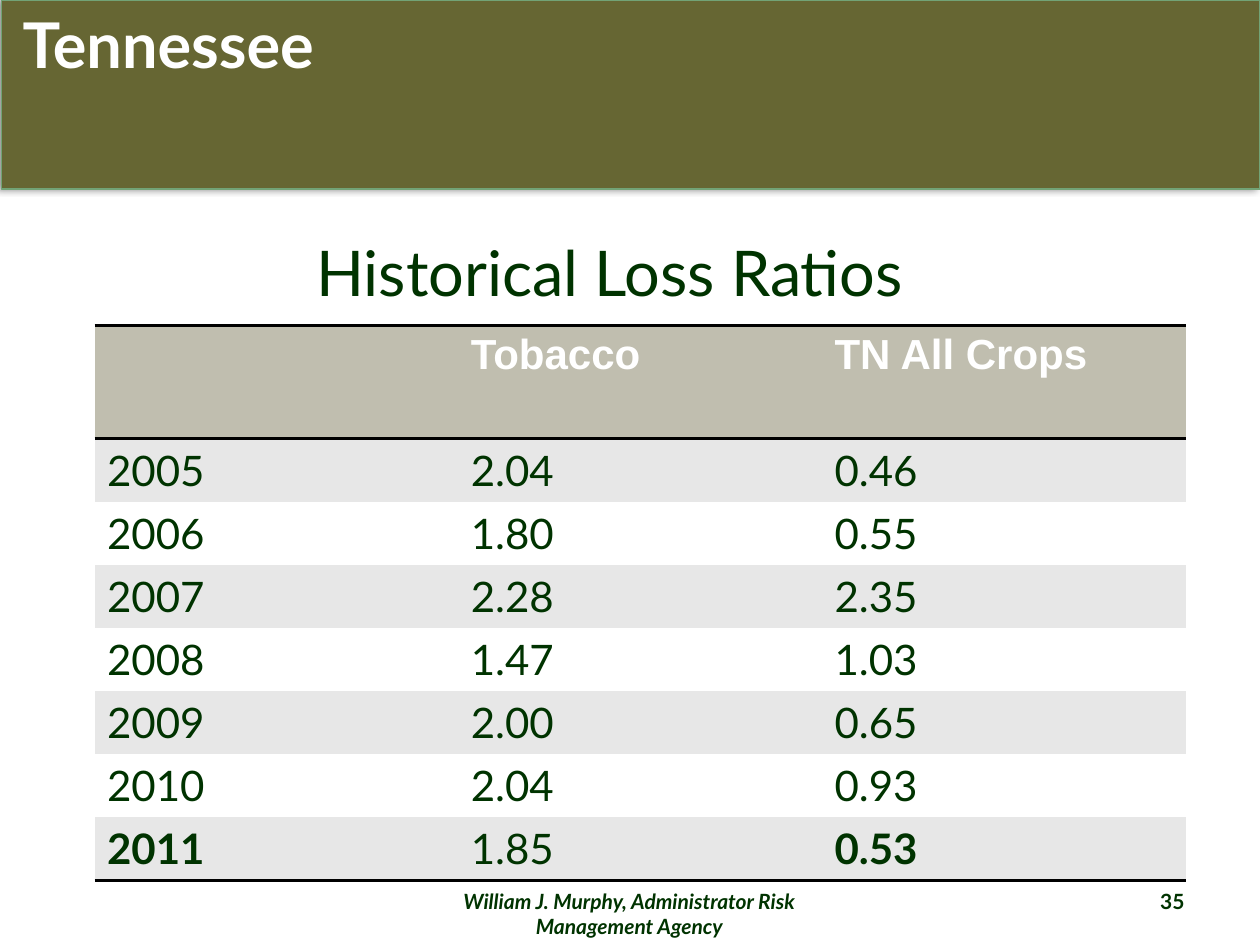
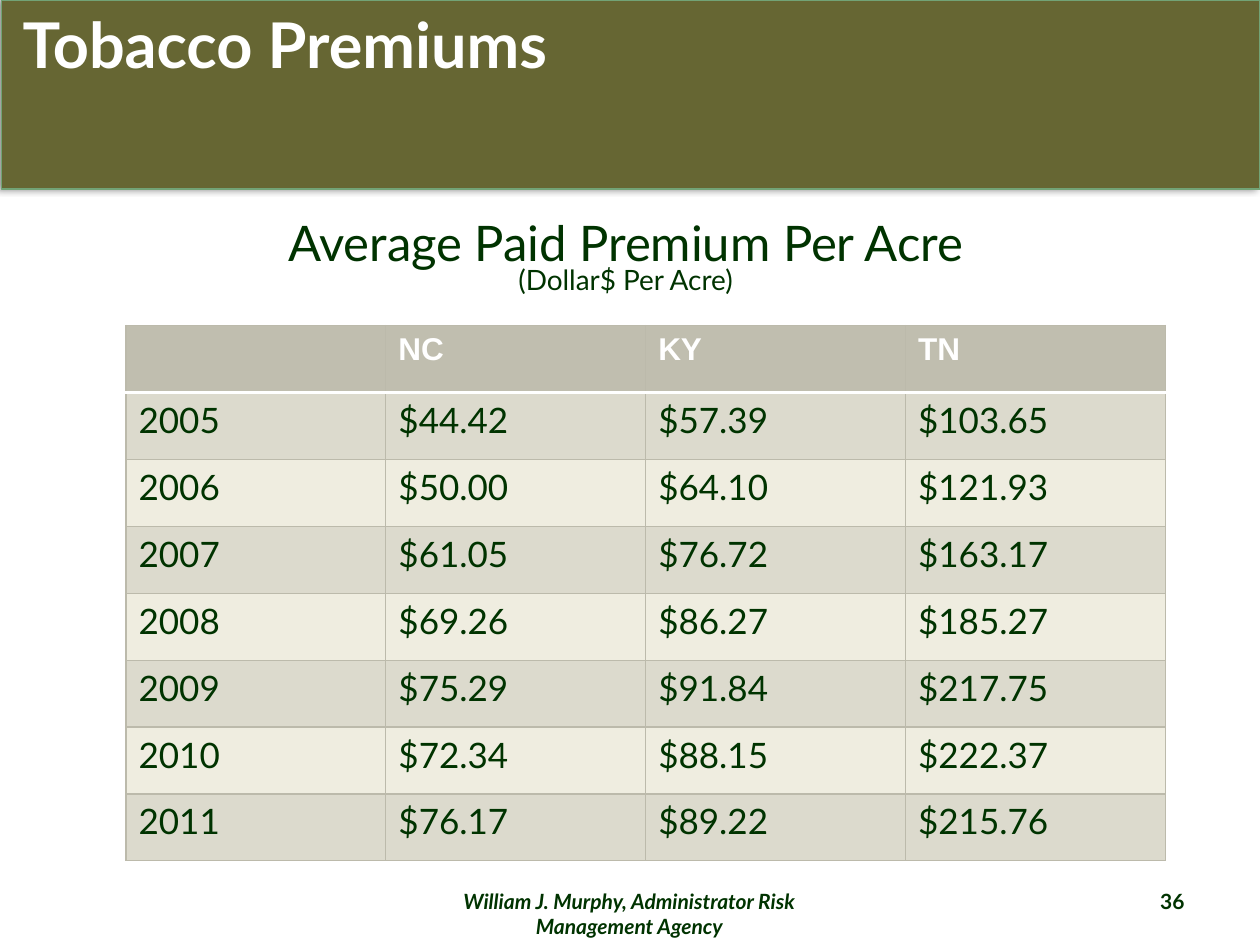
from lxml.etree import SubElement as Sub
from pptx import Presentation
from pptx.dml.color import RGBColor
from pptx.enum.shapes import MSO_SHAPE as Kind
from pptx.enum.text import MSO_ANCHOR as Anchor, MSO_AUTO_SIZE as Fit, PP_ALIGN as Align
from pptx.oxml.ns import qn
from pptx.util import Inches, Pt

tint = RGBColor.from_string
GREEN, WHITE, BLACK = "003300", "FFFFFF", "000000"
OLIVE, SAGE, STONE, EDGE = "666633", "72A376", "C0BEAF", "BCBAAB"
NOGRID = "{2D5ABB26-0587-4C30-8999-92F81FD0307C}"


def put(para, text, size, color=GREEN, face="Lato", bold=False, slant=False):
    run = para.add_run()
    run.text = text
    font = run.font
    font.name, font.size, font.bold, font.italic = face, Pt(size), bold, slant
    font.color.rgb = tint(color)


def rule(cell, side, color, width):
    line = Sub(cell._tc.get_or_add_tcPr(), qn("a:ln" + side), w=str(Pt(width)))
    Sub(Sub(line, qn("a:solidFill")), qn("a:srgbClr"), val=color)


pages = [
    dict(
        title="Tennessee", page="35",
        head=[("Historical Loss Ratios", 36)], spot=(2.41, 1.8, 5.25, 0.71),
        align=Align.LEFT, gap=1.0,
        left=0.75, wide=8.66, rows=[0.9] + [0.5] * 7, sizes=(24, 24),
        bands=("E7E7E7", WHITE), sides=None,
        rules={n: (BLACK, 2) for n in (0, 1, 8)},
        bold=[(7, 0), (7, 2)],
        data=[
            ("", "Tobacco", "TN All Crops"),
            ("2005", "2.04", "0.46"),
            ("2006", "1.80", "0.55"),
            ("2007", "2.28", "2.35"),
            ("2008", "1.47", "1.03"),
            ("2009", "2.00", "0.65"),
            ("2010", "2.04", "0.93"),
            ("2011", "1.85", "0.53"),
        ],
    ),
    dict(
        title="Tobacco Premiums", page="36",
        head=[("Average Paid Premium Per Acre ", 28), ("(Dollar$ Per Acre)", 16)],
        spot=(2.09, 1.75, 5.75, 0.66), align=Align.CENTER, gap=0.75,
        left=1, wide=8.25, rows=[4.25 / 8] * 8, sizes=(18, 20),
        bands=("DCDACD", "EFEDE0"), sides=(EDGE, 0.75),
        rules={n: (WHITE, 2) if n == 1 else (EDGE, 0.75) for n in range(9)},
        bold=[],
        data=[
            ("", "NC", "KY", "TN"),
            ("2005", "$44.42", "$57.39", "$103.65"),
            ("2006", "$50.00", "$64.10", "$121.93"),
            ("2007", "$61.05", "$76.72", "$163.17"),
            ("2008", "$69.26", "$86.27", "$185.27"),
            ("2009", "$75.29", "$91.84", "$217.75"),
            ("2010", "$72.34", "$88.15", "$222.37"),
            ("2011", "$76.17", "$89.22", "$215.76"),
        ],
    ),
]

deck = Presentation()
deck.slide_width, deck.slide_height = Inches(10), Inches(7.5)
base = deck.slide_layouts.get_by_name("Title Only")

for page in pages:
    slide = deck.slides.add_slide(base)
    band = slide.shapes.add_shape(Kind.RECTANGLE, Inches(0.01), 0, Inches(9.99), Inches(1.5))
    band.fill.solid()
    band.fill.fore_color.rgb = tint(OLIVE)
    band.line.color.rgb = tint(SAGE)
    band.line.width = Pt(0.75)
    band.shadow.inherit = False
    glow = Sub(band.element.spPr.find(qn("a:effectLst")), qn("a:outerShdw"),
               blurRad=str(Pt(4)), dist=str(Pt(3)), dir=str(180 * 60000), rotWithShape="0")
    Sub(Sub(glow, qn("a:srgbClr"), val=BLACK), qn("a:alpha"), val="40000")
    slide.shapes.element.insert(2, band.element)

    title = slide.shapes.title
    title.left, title.top, title.width, title.height = map(Inches, (0.08, 0.13, 5.67, 1.25))
    title.text_frame.vertical_anchor = Anchor.TOP
    title.text_frame.auto_size = Fit.NONE
    para = title.text_frame.paragraphs[0]
    para.alignment, para.line_spacing = Align.LEFT, 0.75
    put(para, page["title"], 36, WHITE, bold=True)

    boxes = [
        (page["spot"], page["align"], page["gap"], page["head"], {}),
        ((3.41, 7, 3.17, 0.27), Align.CENTER, 1.0,
         [("William J. Murphy, Administrator Risk Management Agency", 12)],
         dict(bold=True, slant=True)),
        ((7.17, 7, 2.33, 0.27), Align.RIGHT, 1.0, [(page["page"], 12)], dict(bold=True)),
    ]
    for spot, align, gap, runs, style in boxes:
        frame = slide.shapes.add_textbox(*map(Inches, spot)).text_frame
        frame.word_wrap = True
        para = frame.paragraphs[0]
        para.alignment, para.line_spacing = align, gap
        for text, size in runs:
            put(para, text, size, **style)

    data, rows = page["data"], page["rows"]
    count = len(data[0])
    frame = slide.shapes.add_table(len(data), count, Inches(page["left"]), Inches(31 / 12),
                                   Inches(page["wide"]), Inches(sum(rows)))
    frame.element.find(".//" + qn("a:tableStyleId")).text = NOGRID
    table = frame.table
    for col in table.columns:
        col.width = Inches(page["wide"] / count)
    for r, line in enumerate(data):
        table.rows[r].height = Inches(rows[r])
        for c, text in enumerate(line):
            cell = table.cell(r, c)
            edges = [("L", page["sides"]), ("R", page["sides"]),
                     ("T", None if r else page["rules"][0]), ("B", page["rules"].get(r + 1))]
            for side, edge in edges:
                if edge:
                    rule(cell, side, *edge)
            cell.fill.solid()
            cell.fill.fore_color.rgb = tint(page["bands"][(r - 1) % 2] if r else STONE)
            para = cell.text_frame.paragraphs[0]
            if r:
                put(para, text, page["sizes"][1], bold=(r, c) in page["bold"])
            elif text:
                put(para, text, page["sizes"][0], WHITE, "Arial", True)

for spare in list(base.placeholders)[1:]:
    base.shapes.element.remove(spare.element)

deck.save("out.pptx")
